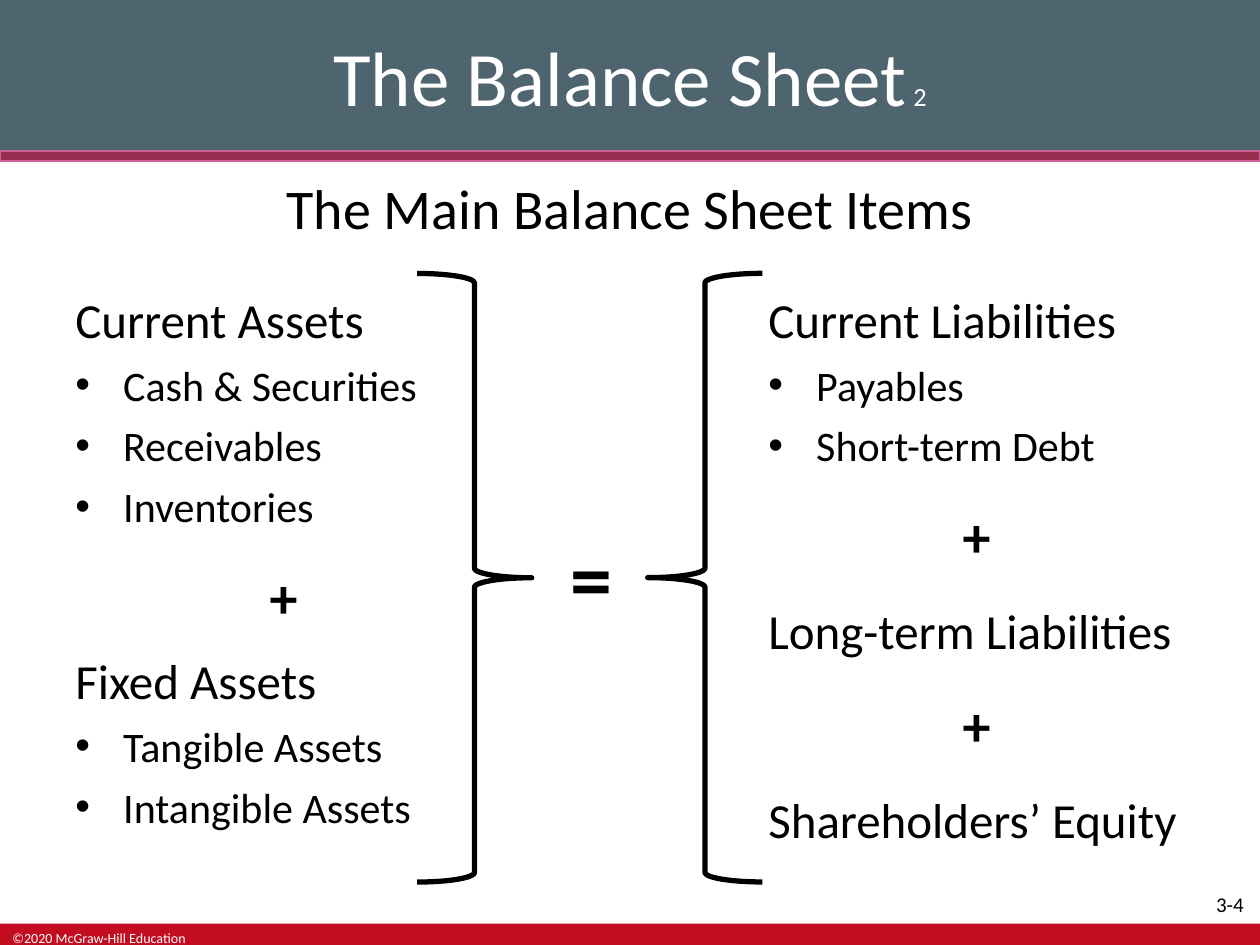
from lxml import etree
from pptx import Presentation
from pptx.dml.color import RGBColor
from pptx.enum.shapes import MSO_SHAPE
from pptx.enum.text import MSO_ANCHOR, PP_ALIGN
from pptx.oxml.ns import qn
from pptx.util import Pt

EMU_PER_PX = 9144
WIDTH, HEIGHT = 1000, 750
FONT = "Calibri"
BLACK = RGBColor(0x00, 0x00, 0x00)
WHITE = RGBColor(0xFF, 0xFF, 0xFF)
SLATE = RGBColor(0x4E, 0x64, 0x6F)
MAROON = RGBColor(0x99, 0x2D, 0x4F)
PINK = RGBColor(0xCF, 0x61, 0x99)
RED = RGBColor(0xC3, 0x0C, 0x20)
RECTANGLE, LEFT_BRACE = MSO_SHAPE.RECTANGLE, MSO_SHAPE.LEFT_BRACE
LEFT, CENTER, RIGHT = PP_ALIGN.LEFT, PP_ALIGN.CENTER, PP_ALIGN.RIGHT
TOP, MIDDLE = MSO_ANCHOR.TOP, MSO_ANCHOR.MIDDLE
BULLET_INDENT = 38

HEADING = {"size": 28, "after": 6}
ITEM = {"size": 24, "after": 6, "bullet": True}
ASSET_PLUS = {"size": 32, "bold": True, "align": CENTER, "before": 12, "after": 12}
LIABILITY_PLUS = {**ASSET_PLUS, "after": 18}
ASSETS = [
    ("Current Assets", HEADING),
    ("Cash & Securities", ITEM),
    ("Receivables", ITEM),
    ("Inventories", ITEM),
    ("+", ASSET_PLUS),
    ("Fixed Assets", HEADING),
    ("Tangible Assets", ITEM),
    ("Intangible Assets", ITEM),
]
LIABILITIES = [
    ("Current Liabilities", HEADING),
    ("Payables", ITEM),
    ("Short-term Debt", ITEM),
    ("+", LIABILITY_PLUS),
    ("Long-term Liabilities", HEADING),
    ("+", LIABILITY_PLUS),
    ("Shareholders’ Equity", HEADING),
]


def px(length):
    return length * EMU_PER_PX


class SlideBuilder:
    """Draws styled elements on the current slide."""

    def __init__(self, slide):
        self.slide = slide

    def shape(self, kind, box, fill=None, line=None, weight=1, rotation=0):
        shape = self.slide.shapes.add_shape(kind, *map(px, box))
        shape.shadow.inherit = False
        shape.rotation = rotation
        if fill is None:
            shape.fill.background()
        else:
            shape.fill.solid()
            shape.fill.fore_color.rgb = fill
        if line is None:
            shape.line.fill.background()
        else:
            shape.line.color.rgb = line
            shape.line.width = Pt(weight)

    def bullet(self, paragraph):
        properties = paragraph._p.get_or_add_pPr()
        properties.set("marL", str(px(BULLET_INDENT)))
        properties.set("indent", str(px(-BULLET_INDENT)))
        etree.SubElement(properties, qn("a:buFont")).set("typeface", "Arial")
        etree.SubElement(properties, qn("a:buChar")).set("char", "•")

    def run(self, paragraph, text, size, color, bold=False):
        run = paragraph.add_run()
        run.text = text
        values = {"name": FONT, "size": Pt(size), "bold": bold}
        for name, value in values.items():
            setattr(run.font, name, value)
        run.font.color.rgb = color
        return run

    def text(self, box, lines, color=BLACK, anchor=TOP, wrap=True):
        frame = self.slide.shapes.add_textbox(*map(px, box)).text_frame
        frame.word_wrap = wrap
        frame.vertical_anchor = anchor
        for index, (text, style) in enumerate(lines):
            paragraph = frame.add_paragraph() if index else frame.paragraphs[0]
            values = {
                "alignment": style.get("align", LEFT),
                "space_before": Pt(style.get("before", 0)),
                "space_after": Pt(style.get("after", 0)),
            }
            for name, value in values.items():
                setattr(paragraph, name, value)
            if style.get("bullet"):
                self.bullet(paragraph)
            self.run(paragraph, text, style["size"], color, style.get("bold", False))
        return frame


def main():
    presentation = Presentation()
    presentation.slide_width, presentation.slide_height = px(WIDTH), px(HEIGHT)
    builder = SlideBuilder(presentation.slides.add_slide(presentation.slide_layouts[6]))

    builder.shape(RECTANGLE, (0, 733, WIDTH, 17), RED)
    builder.text((0, 733, 170, 17), [("©2020 McGraw-Hill Education", {"size": 8})], WHITE)
    builder.text((927, 703, 70, 30), [("3-4", {"size": 12, "align": RIGHT})], wrap=False)

    header = (0, 0, WIDTH, 120)
    builder.shape(RECTANGLE, header, SLATE)
    builder.shape(RECTANGLE, (0, 120, WIDTH, 8), MAROON, PINK)
    title = builder.text(
        header, [("The Balance Sheet", {"size": 44, "align": CENTER})], WHITE, MIDDLE
    )
    builder.run(title.paragraphs[0], " 2", 15, WHITE)

    subtitle = {"size": 32, "align": CENTER, "after": 6}
    builder.text((50, 133, 900, 60), [("The Main Balance Sheet Items", subtitle)])
    for left, lines in ((50, ASSETS), (600, LIABILITIES)):
        builder.text((left, 225, 350, 450), lines)
    for left, rotation in ((331, 180), (514, 0)):
        builder.shape(
            LEFT_BRACE, (left, 217, 91, 483), line=BLACK, weight=3, rotation=rotation
        )
    equals = {"size": 48, "bold": True, "align": CENTER, "after": 6}
    builder.text((424, 392, 90, 130), [("=", equals)], anchor=MIDDLE)

    presentation.save("out.pptx")


if __name__ == "__main__":
    main()
